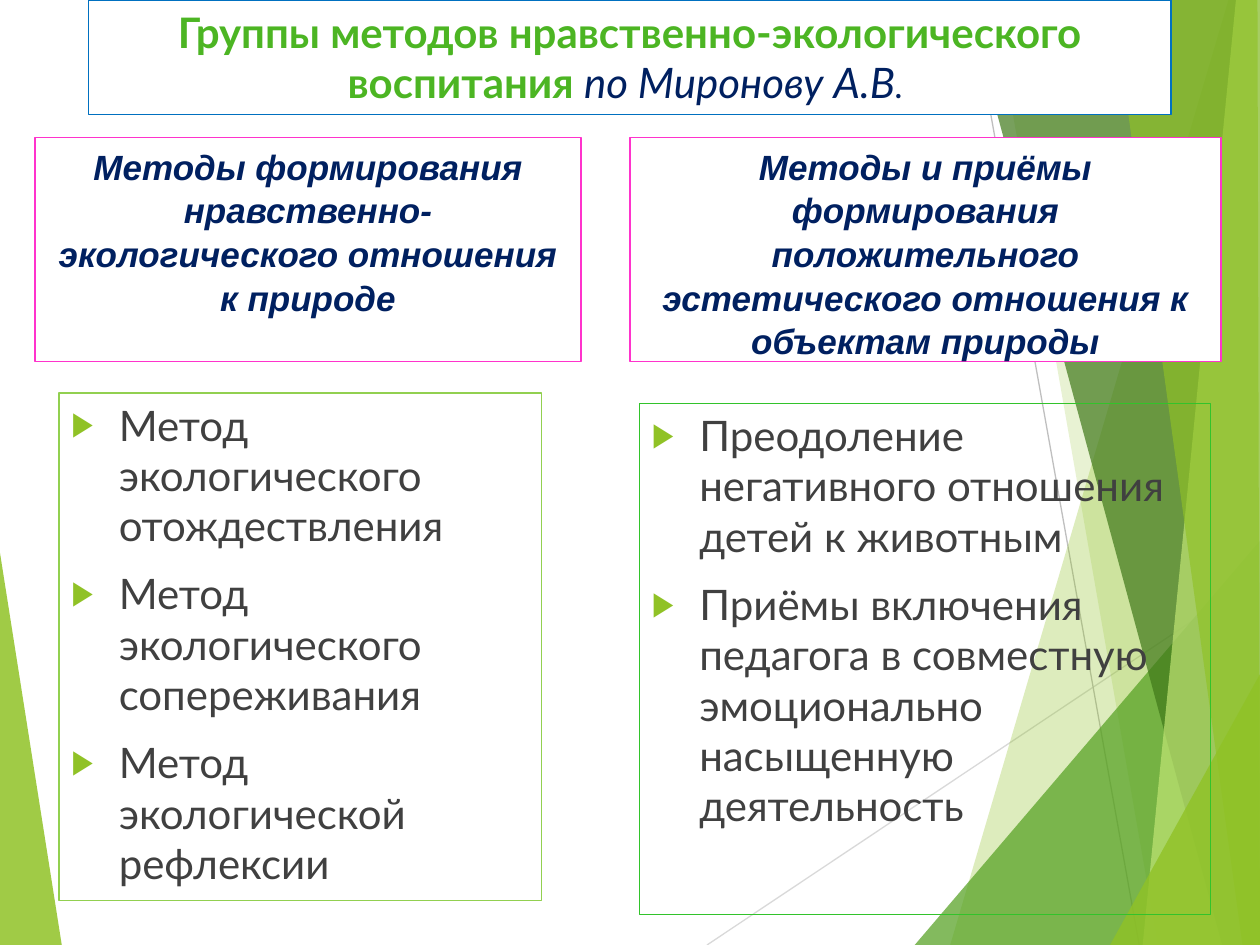
from lxml import etree
from pptx import Presentation
from pptx.dml.color import RGBColor
from pptx.enum.shapes import MSO_CONNECTOR, MSO_SHAPE
from pptx.enum.text import MSO_ANCHOR, MSO_AUTO_SIZE, PP_ALIGN
from pptx.oxml.ns import qn
from pptx.util import Pt

RECT = MSO_SHAPE.RECTANGLE
LINE = MSO_CONNECTOR.STRAIGHT
TOP = MSO_ANCHOR.TOP
FIXED = MSO_AUTO_SIZE.NONE
MID = PP_ALIGN.CENTER
LEFT = PP_ALIGN.LEFT

HUES = {
    "lime": "90C226", "green": "54A021", "dark": "3F7819", "pale": "C0E474",
    "ray": "D9D9D9", "beam": "BFBFBF", "white": "FFFFFF", "pink": "FF33CC",
    "navy": "002060", "text": "404040", "grass": "4CB523", "blue": "0070C0",
    "leaf": "92D050", "mint": "32C32B",
}
RGB = {name: RGBColor.from_string(code) for name, code in HUES.items()}


def frame(box, spot, edge, fill):
    box.left, box.top, box.width, box.height = [Pt(n) for n in spot]
    if fill:
        box.fill.solid()
        box.fill.fore_color.rgb = RGB[fill]
    else:
        box.fill.background()
    box.line.color.rgb = RGB[edge]
    box.line.width = Pt(0.75)
    text = box.text_frame
    text.word_wrap = True
    text.auto_size = FIXED
    text.vertical_anchor = TOP
    text.margin_left = text.margin_right = Pt(7.2)
    text.margin_top = text.margin_bottom = Pt(3.6)
    return text


def write(para, words, face, size, hue, bold=False, slant=False):
    run = para.add_run()
    run.text = words
    font = run.font
    font.name, font.size = face, Pt(size)
    font.bold, font.italic = bold, slant
    font.color.rgb = RGB[hue]


deck = Presentation()
deck.slide_width, deck.slide_height = Pt(720), Pt(540)
slide = deck.slides.add_slide(deck.slide_layouts[5])
shapes = slide.shapes

rays = [(404, 540, 720, 329, "ray"), (554.5, 0, 651, 540, "beam")]
for x1, y1, x2, y2, hue in rays:
    ray = shapes.add_connector(LINE, Pt(x1), Pt(y1), Pt(x2), Pt(y2))
    ray.line.color.rgb = RGB[hue]
    ray.line.width = Pt(0.75)
    etree.SubElement(ray._element.spPr, qn("a:effectLst"))

shards = [
    ([(0, 316), (35.3, 540), (0, 540)], "lime", 85),
    ([(702, 0), (543, 540), (720, 540), (720, 0)], "lime", 30),
    ([(567.4, 0), (661.7, 540), (720, 540), (720, 0)], "lime", 20),
    ([(522.7, 540), (720, 309), (720, 540)], "green", 72),
    ([(552.2, 0), (698.4, 540), (720, 540), (720, 0)], "dark", 70),
    ([(706.3, 0), (653, 540), (720, 540), (720, 0)], "pale", 70),
    ([(635.8, 0), (710, 540), (720, 540), (718.6, 0)], "lime", 65),
    ([(634.3, 540), (720, 385.2), (720, 540)], "lime", 80),
]
for points, hue, alpha in shards:
    spots = [(Pt(x), Pt(y)) for x, y in points]
    pen = shapes.build_freeform(*spots[0])
    pen.add_line_segments(spots[1:], close=True)
    shard = pen.convert_to_shape()
    shard.shadow.inherit = False
    shard.line.fill.background()
    shard.fill.solid()
    shard.fill.fore_color.rgb = RGB[hue]
    tint = shard._element.spPr.find(".//" + qn("a:srgbClr"))
    etree.SubElement(tint, qn("a:alpha"), val=str(alpha * 1000))

lists = [
    ((33.8, 224.6, 275.8, 290.2), "leaf", [
        "Метод экологического отождествления",
        "Метод экологического сопереживания",
        "Метод экологической рефлексии",
    ]),
    ((365.5, 230.5, 326.2, 292.3), "mint", [
        "Преодоление негативного отношения детей к животным",
        "Приёмы включения педагога в совместную эмоционально "
        "насыщенную деятельность",
    ]),
]
for spot, edge, items in lists:
    box = shapes.add_shape(RECT, 0, 0, 0, 0)
    box.shadow.inherit = False
    text = frame(box, spot, edge, None)
    for index, item in enumerate(items):
        para = text.paragraphs[0] if index == 0 else text.add_paragraph()
        para.alignment = LEFT
        para.space_before = Pt(10)
        write(para, item, "Lato", 24, "text")
        props = para._p.get_or_add_pPr()
        props.set("marL", str(Pt(27)))
        props.set("indent", str(-Pt(27)))
        tint = etree.SubElement(props, qn("a:buClr"))
        etree.SubElement(tint, qn("a:srgbClr"), val=HUES["lime"])
        etree.SubElement(props, qn("a:buSzPct"), val="80000")
        etree.SubElement(props, qn("a:buFont"), typeface="Arial")
        etree.SubElement(props, qn("a:buChar"), char="▶")

heads = [
    (shapes.title, (20, 78.5, 312, 128.3),
     "Методы формирования нравственно-экологического отношения к природе"),
    (shapes.add_shape(RECT, 0, 0, 0, 0), (360, 78.5, 337.7, 128.3),
     "Методы и приёмы формирования положительного эстетического "
     "отношения к объектам природы"),
]
for box, spot, words in heads:
    box.shadow.inherit = False
    para = frame(box, spot, "pink", "white").paragraphs[0]
    para.alignment = MID
    para.line_spacing = 1.04
    write(para, words, "Arial", 20, "navy", True, True)

banner = shapes.add_shape(RECT, 0, 0, 0, 0)
banner.shadow.inherit = False
para = frame(banner, (50.4, 0, 618.8, 65.4), "blue", "white").paragraphs[0]
para.alignment = MID
write(para, "Группы методов нравственно-экологического воспитания ",
      "Lato", 24, "grass", True)
write(para, "по Миронову А.В", "Lato", 24, "navy", False, True)
write(para, ". ", "Lato", 20, "navy", False, True)

deck.save("out.pptx")
